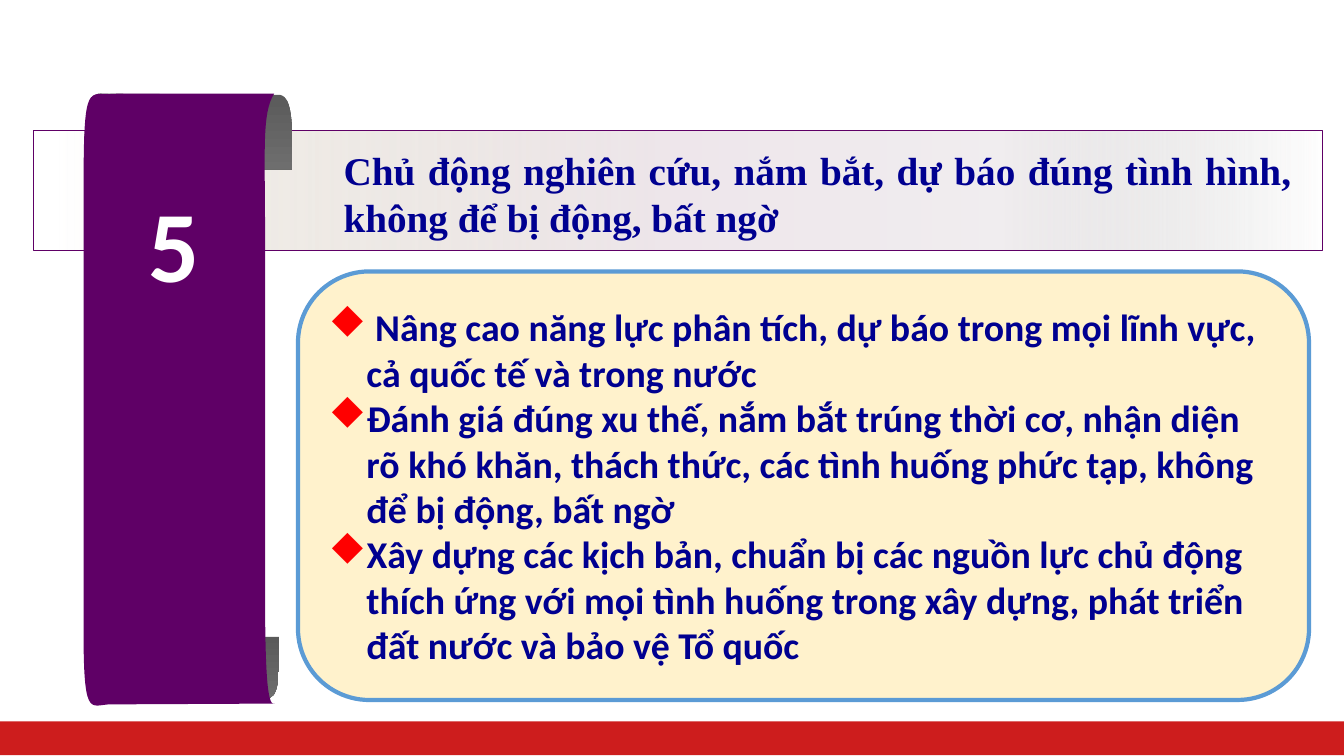
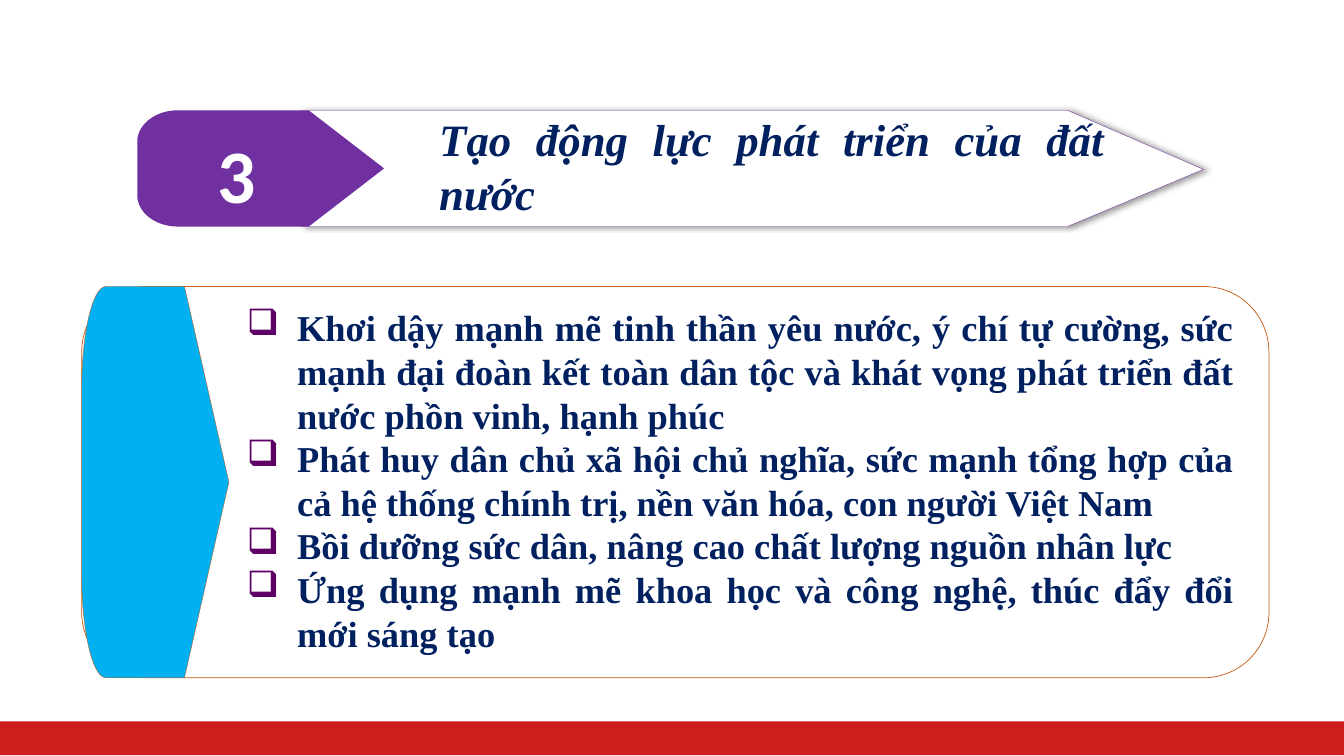
"""Builds two Vietnamese slides, each with a numbered heading and a bulleted panel."""
from lxml import etree
from pptx import Presentation
from pptx.dml.color import RGBColor
from pptx.enum.shapes import MSO_SHAPE
from pptx.enum.text import MSO_ANCHOR, PP_ALIGN
from pptx.oxml.ns import qn
from pptx.util import Cm, Pt

RECT, ROUND = MSO_SHAPE.RECTANGLE, MSO_SHAPE.ROUNDED_RECTANGLE
LEFT, CENTER, JUSTIFY = PP_ALIGN.LEFT, PP_ALIGN.CENTER, PP_ALIGN.JUSTIFY
TOP, MIDDLE = MSO_ANCHOR.TOP, MSO_ANCHOR.MIDDLE
SANS, SERIF, SYMBOLS = "Calibri", "Times New Roman", "Wingdings"
DIAMOND, CHECKBOX = "u", "q"
COLORS = {
    "white": "FFFFFF", "band": "CD1D1D", "plum": "5F0066", "purple": "7030A0",
    "blue_text": "000090", "navy": "002060", "cream": "FFF2CC", "panel_line": "5B9BD5",
    "rust": "C55A11", "sky": "00B0F0", "red": "FF0000", "black": "000000",
    "gray_dark": "5A5A5A", "gray_light": "6E6E6E", "fade_start": "C8C7C6",
    "fade_a": "F0EDEF", "fade_b": "EEE6EB", "fade_c": "E2DCD1", "fade_end": "EFEBE5",
}
FADE = [(0, "fade_start", 0), (25, "fade_a", 100), (50, "fade_b", 100),
        (85, "fade_c", 52), (98, "fade_end", 0)]
SCROLL_GRAY = [(0, "gray_dark", 100), (100, "gray_light", 100)]
ROLL_TOP = [(7.37, 4.27), (6.91, 4.27), (2.11, 4.29),
            ((2.16, 2.72), (2.16, 2.31), (2.62, 2.36)), (6.99, 2.39),
            ((7.37, 2.36), (7.37, 3.02), (7.37, 4.27))]
ROLL_BOTTOM = [(7.04, 16.05), (6.63, 16.05), (2.11, 16.03),
               ((2.16, 17.35), (2.16, 17.65), (2.57, 17.63)), (6.68, 17.6),
               ((7.04, 17.63), (7.04, 17.09), (7.04, 16.05))]
RIBBON = [(6.91, 2.36), (2.97, 2.36), ((2.29, 2.44), (2.13, 1.96), (2.11, 4.11)),
          (2.11, 15.37), ((2.08, 18.29), (2.26, 17.73), (2.82, 17.75)), (6.93, 17.73),
          ((6.76, 17.81), (6.68, 17.25), (6.68, 14.83)), (6.68, 5.82),
          ((6.68, 3.78), (6.6, 2.84), (6.91, 2.36))]
HEADING_ARROW = [(7.59, 2.78), (26.9, 2.78), (30.33, 4.27), (26.9, 5.71), (7.59, 5.71)]
FORECAST = [
    " Nâng cao năng lực phân tích, dự báo trong mọi lĩnh vực, cả quốc tế và trong nước",
    "Đánh giá đúng xu thế, nắm bắt trúng thời cơ, nhận diện rõ khó khăn, thách thức, "
    "các tình huống phức tạp, không để bị động, bất ngờ",
    "Xây dựng các kịch bản, chuẩn bị các nguồn lực chủ động thích ứng với mọi tình huống "
    "trong xây dựng, phát triển đất nước và bảo vệ Tổ quốc",
]
DRIVERS = [
    "Khơi dậy mạnh mẽ tinh thần yêu nước, ý chí tự cường, sức mạnh đại đoàn kết toàn dân "
    "tộc và khát vọng phát triển đất nước phồn vinh, hạnh phúc",
    "Phát huy dân chủ xã hội chủ nghĩa, sức mạnh tổng hợp của cả hệ thống chính trị, "
    "nền văn hóa, con người Việt Nam",
    "Bồi dưỡng sức dân, nâng cao chất lượng nguồn nhân lực",
    "Ứng dụng mạnh mẽ khoa học và công nghệ, thúc đẩy đổi mới sáng tạo",
]


def rgb(name):
    return RGBColor.from_string(COLORS[name])


def add_color(parent, name, opacity=100):
    clr = etree.SubElement(parent, qn("a:srgbClr"), val=COLORS[name])
    if opacity < 100:
        etree.SubElement(clr, qn("a:alpha"), val=str(opacity * 1000))


def style(sp, fill, line=None, width=1.0):
    sp.shadow.inherit = False
    if fill:
        sp.fill.solid()
        sp.fill.fore_color.rgb = rgb(fill)
    if line:
        sp.line.color.rgb = rgb(line)
        sp.line.width = Pt(width)
    else:
        sp.line.fill.background()
    return sp


def gradient(sp, stops, angle):
    sp.fill.gradient()
    sp.fill.gradient_angle = angle
    gs_list = sp.element.spPr.find(".//" + qn("a:gsLst"))
    for gs in list(gs_list):
        gs_list.remove(gs)
    for pos, name, opacity in stops:
        gs = etree.SubElement(gs_list, qn("a:gs"), pos=str(pos * 1000))
        add_color(gs, name, opacity)


def drop_shadow(sp, name, opacity, blur, dist):
    effects = sp.element.spPr.find(qn("a:effectLst"))
    shadow = etree.SubElement(effects, qn("a:outerShdw"), blurRad=str(Pt(blur)),
                              dist=str(Pt(dist)), dir="0", rotWithShape="0")
    add_color(shadow, name, opacity)


def box(s, kind, at, fill, line=None, width=1.0):
    return style(s.shapes.add_shape(kind, *map(Cm, at)), fill, line, width)


def bend(sp, starts):
    lines = sp.element.spPr.findall(".//" + qn("a:lnTo"))
    for i in starts:
        first, *others = lines[i:i + 3]
        curve = etree.Element(qn("a:cubicBezTo"))
        first.addprevious(curve)
        for segment in (first, *others):
            curve.append(segment[0])
            segment.getparent().remove(segment)


def outline(s, steps, fill, line=None, width=1.0):
    points, curve_starts = [], []
    for step in steps:
        if len(step) == 3:
            curve_starts.append(len(points) - 1)
            points.extend(step)
        else:
            points.append(step)
    points = [(Cm(x), Cm(y)) for x, y in points]
    fb = s.shapes.build_freeform(*points[0])
    fb.add_line_segments(points[1:], close=True)
    sp = fb.convert_to_shape()
    bend(sp, curve_starts)
    return style(sp, fill, line, width)


def tag(s, x, y, h, corner_w, corner_h, shoulder, tip, fill, line=None, width=1.0):
    bottom, k = y + h, 0.45
    outline(s, [
        (x, bottom - corner_h), (x, y + corner_h),
        ((x, y + k * corner_h), (x + k * corner_w, y), (x + corner_w, y)),
        (x + shoulder, y), (x + tip, y + h / 2), (x + shoulder, bottom),
        (x + corner_w, bottom),
        ((x + k * corner_w, bottom), (x, bottom - k * corner_h), (x, bottom - corner_h)),
    ], fill, line, width)


def write(sp, texts, font, size, color, align=LEFT, anchor=TOP, italic=None, bullet=None):
    tf = sp.text_frame
    tf.word_wrap = True
    tf.vertical_anchor = anchor
    for i, text in enumerate(texts):
        p = tf.add_paragraph() if i else tf.paragraphs[0]
        p.alignment = align
        if bullet:
            char, bullet_color, indent = bullet
            pPr = p._p.get_or_add_pPr()
            pPr.set("marL", str(Cm(indent)))
            pPr.set("indent", str(-Cm(indent)))
            add_color(etree.SubElement(pPr, qn("a:buClr")), bullet_color)
            etree.SubElement(pPr, qn("a:buFont"), typeface=SYMBOLS, charset="2")
            etree.SubElement(pPr, qn("a:buChar"), char=char)
        r = p.add_run()
        r.text = text
        r.font.name, r.font.size = font, Pt(size)
        r.font.bold, r.font.italic = True, italic
        r.font.color.rgb = rgb(color)


def text_box(s, at, *args, **kwargs):
    write(s.shapes.add_textbox(*map(Cm, at)), *args, **kwargs)


def add_master_band(prs, s):
    band = box(s, RECT, (0, 18.18, 33.87, 0.85), "band")
    prs.slide_master.shapes.element.append(band.element)


def forecast_slide(s):
    bar = box(s, RECT, (0.84, 3.29, 32.49, 3.03), None, "plum")
    gradient(bar, FADE, 180)
    for roll in (ROLL_TOP, ROLL_BOTTOM):
        gradient(outline(s, roll, None), SCROLL_GRAY, 270)
    outline(s, RIBBON, "plum")
    text_box(s, (1.69, 4.45, 5.38, 11.05), ["5"], SANS, 72, "white", CENTER)
    text_box(s, (8.41, 3.56, 24.38, 2.64),
             ["Chủ động nghiên cứu, nắm bắt, dự báo đúng tình hình, "
              "không để bị động, bất ngờ"], SERIF, 28, "blue_text", JUSTIFY)
    panel = box(s, ROUND, (7.51, 6.84, 25.48, 10.8), "cream", "panel_line", 3)
    write(panel, FORECAST, SANS, 27, "blue_text", anchor=MIDDLE,
          bullet=(DIAMOND, "red", 0.95))


def drivers_slide(s):
    box(s, ROUND, (2.06, 7.22, 29.92, 9.86), "white", "rust", 0.5)
    tag(s, 2.06, 7.22, 9.86, 0.61, 2.59, 2.59, 3.71, "sky", "rust", 0.25)
    text_box(s, (5.97, 7.57, 25.4, 9.14), DRIVERS, SERIF, 26, "navy", JUSTIFY,
             bullet=(CHECKBOX, "plum", 1.27))
    arrow = outline(s, HEADING_ARROW, "white", "purple", 0.25)
    drop_shadow(arrow, "black", 40, 4, 3)
    tag(s, 3.46, 2.78, 2.93, 1.02, 0.79, 4.32, 6.22, "purple")
    number = box(s, RECT, (4.34, 3.07, 3.25, 2.57), "purple")
    write(number, ["3"], SANS, 54, "white", CENTER, MIDDLE)
    text_box(s, (10.82, 2.67, 17.27, 3), ["Tạo động lực phát triển của đất nước"],
             SERIF, 32, "navy", JUSTIFY, MIDDLE, italic=True)


def main():
    prs = Presentation()
    prs.slide_width, prs.slide_height = Cm(33.87), Cm(19.05)
    blank = prs.slide_layouts[6]
    first, second = (prs.slides.add_slide(blank) for _ in range(2))
    add_master_band(prs, first)
    forecast_slide(first)
    drivers_slide(second)
    prs.save("out.pptx")


if __name__ == "__main__":
    main()
